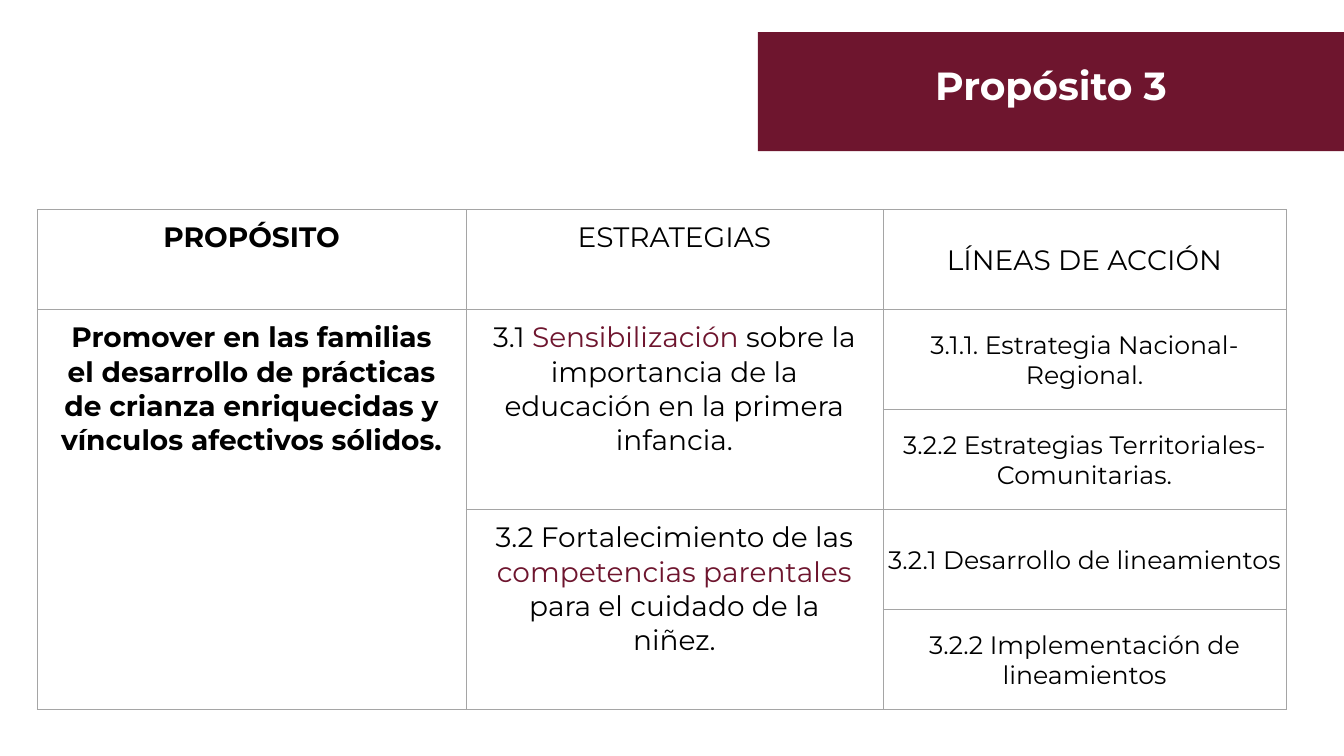
"""Build the "Propósito 3" slide: a title band and a table of strategies."""
from dataclasses import dataclass

import lxml.etree
import pptx
import pptx.dml.color
import pptx.enum.text
import pptx.oxml.ns
import pptx.util

Cm = pptx.util.Cm
Pt = pptx.util.Pt
ANCHOR = pptx.enum.text.MSO_ANCHOR
COLORS = {"wine": "6E152E", "white": "FFFFFF", "black": "000000", "grid": "A5A5A5"}
FONT = "Montserrat"
COL_WIDTHS = (10.8, 10.51, 10.16)
ROW_HEIGHT = 2.52
ROWS = 5
WIDE = {"vertical_anchor": ANCHOR.TOP, "margin_left": Cm(0.58), "margin_right": Cm(0.58),
        "margin_top": Cm(0.28), "margin_bottom": Cm(0.28)}
TIGHT = {"vertical_anchor": ANCHOR.MIDDLE, "margin_left": Cm(0.05), "margin_right": Cm(0.05),
         "margin_top": Cm(0.05), "margin_bottom": Cm(0)}


@dataclass(frozen=True)
class Run:
    text: str
    color: str = "black"


@dataclass(frozen=True)
class Entry:
    row: int
    col: int
    runs: tuple[Run, ...]
    size: int = 20
    bold: bool = False
    span: int = 1


ENTRIES = (
    Entry(0, 0, (Run("PROPÓSITO"),), bold=True),
    Entry(0, 1, (Run("ESTRATEGIAS"),)),
    Entry(0, 2, (Run("LÍNEAS DE ACCIÓN"),)),
    Entry(1, 0, (Run("Promover en las familias el desarrollo de prácticas de crianza "
                     "enriquecidas y vínculos afectivos sólidos."),), bold=True, span=4),
    Entry(1, 1, (Run("3.1 "), Run("Sensibilización", "wine"),
                 Run(" sobre la importancia de la educación en la primera infancia.")), span=2),
    Entry(3, 1, (Run("3.2 Fortalecimiento de las "), Run("competencias parentales ", "wine"),
                 Run("para el cuidado de la niñez.")), span=2),
    Entry(1, 2, (Run("3.1.1. Estrategia Nacional- Regional."),), size=18),
    Entry(2, 2, (Run("3.2.2 Estrategias Territoriales-Comunitarias."),), size=18),
    Entry(3, 2, (Run("3.2.1 Desarrollo de lineamientos"),), size=18),
    Entry(4, 2, (Run("3.2.2 Implementación de lineamientos"),), size=18),
)


def rgb(name: str) -> pptx.dml.color.RGBColor:
    """Return the named colour."""
    return pptx.dml.color.RGBColor.from_string(COLORS[name])


def set_all(target: object, values: dict) -> None:
    """Set each attribute of target from values."""
    for name, value in values.items():
        setattr(target, name, value)


def write(tf, runs: tuple[Run, ...], size: int, bold: bool) -> None:
    """Fill the first paragraph with centred, formatted runs."""
    p = tf.paragraphs[0]
    p.alignment = pptx.enum.text.PP_ALIGN.CENTER
    for run in runs:
        r = p.add_run()
        r.text = run.text
        set_all(r.font, {"name": FONT, "size": Pt(size), "bold": bold})
        r.font.color.rgb = rgb(run.color)


def add_borders(cell) -> None:
    """Draw thin grid lines on the four sides of a cell."""
    qn = pptx.oxml.ns.qn
    tc_pr = cell._tc.get_or_add_tcPr()
    for i, side in enumerate(("lnL", "lnR", "lnT", "lnB")):
        ln = lxml.etree.Element(qn(f"a:{side}"), w=str(Pt(0.5)))
        fill = lxml.etree.SubElement(ln, qn("a:solidFill"))
        lxml.etree.SubElement(fill, qn("a:srgbClr"), val=COLORS["grid"])
        tc_pr.insert(i, ln)


def add_title(s) -> None:
    """Place the title band at the right edge."""
    sp = s.shapes.title
    set_all(sp, {"left": Cm(19.1), "top": Cm(0.81), "width": Cm(14.77), "height": Cm(3)})
    sp.fill.solid()
    sp.fill.fore_color.rgb = rgb("wine")
    tf = sp.text_frame
    set_all(tf, {"vertical_anchor": ANCHOR.MIDDLE, "word_wrap": True,
                 "auto_size": pptx.enum.text.MSO_AUTO_SIZE.NONE, "margin_bottom": Cm(0.3)})
    write(tf, (Run("Propósito 3", "white"),), 28, True)
    tf.paragraphs[0].line_spacing = 0.9


def add_strategy_table(s) -> None:
    """Build the table of purpose, strategies and lines of action."""
    frame = s.shapes.add_table(ROWS, len(COL_WIDTHS), Cm(0.94), Cm(5.28),
                               Cm(sum(COL_WIDTHS)), Cm(ROWS * ROW_HEIGHT))
    table = frame.table
    set_all(table, {"first_row": False, "horz_banding": False})
    for col, width in zip(table.columns, COL_WIDTHS):
        col.width = Cm(width)
    for row in table.rows:
        row.height = Cm(ROW_HEIGHT)
    for cell in table.iter_cells():
        cell.fill.background()
        add_borders(cell)
    for e in ENTRIES:
        cell = table.cell(e.row, e.col)
        if e.span > 1:
            cell.merge(table.cell(e.row + e.span - 1, e.col))
        set_all(cell, TIGHT if e.col == 2 else WIDE)
        write(cell.text_frame, e.runs, e.size, e.bold)


def main() -> None:
    """Create and save the presentation."""
    prs = pptx.Presentation()
    set_all(prs, {"slide_width": Cm(33.87), "slide_height": Cm(19.05)})
    s = prs.slides.add_slide(prs.slide_layouts[5])
    add_title(s)
    add_strategy_table(s)
    prs.save("out.pptx")


if __name__ == "__main__":
    main()
